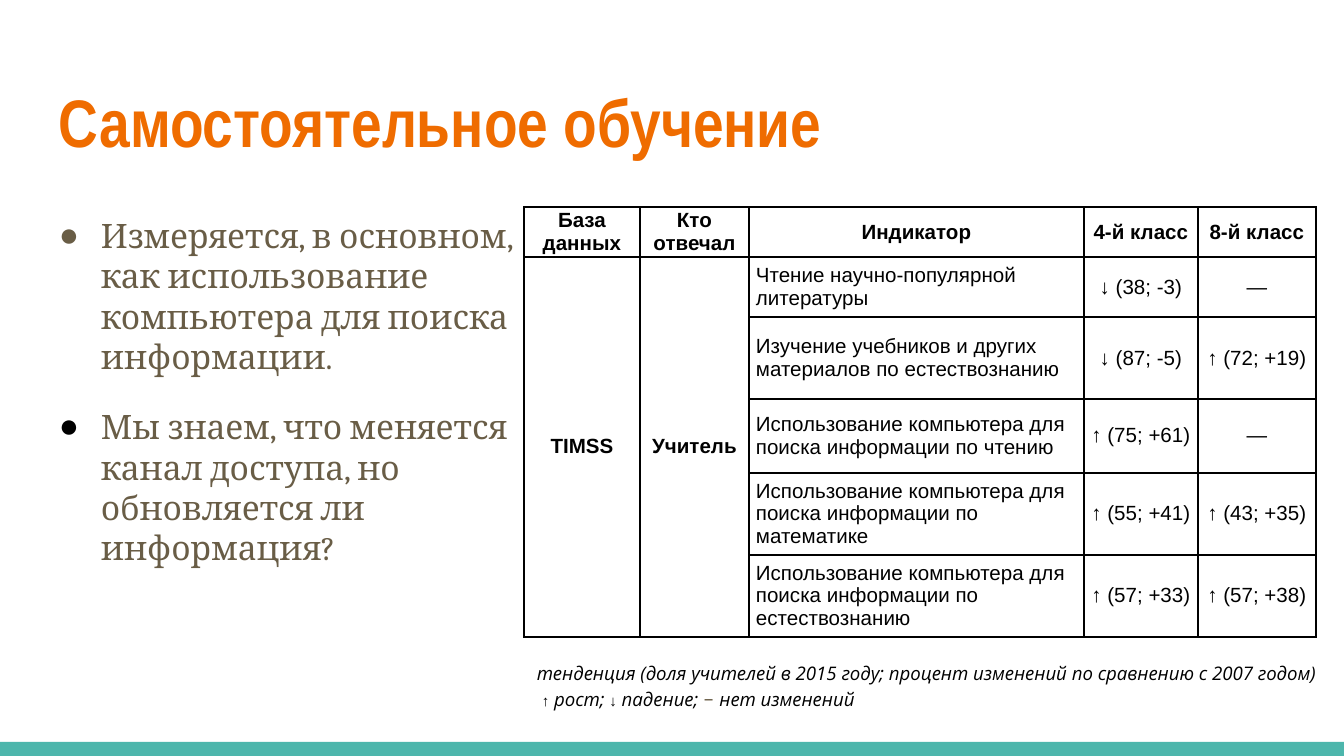
from lxml import etree
from pptx import Presentation
from pptx.dml.color import RGBColor
from pptx.enum import shapes, text
from pptx.oxml import ns
from pptx.util import Emu, Pt

PX = 914400 / 134.4  # EMU in one px
COLORS = {"accent": "EF6C00", "body": "695D46", "ink": "000000",
          "paper": "FFFFFF", "footer": "4DB6AC"}

POINTS = [
    ("Измеряется, в основном, как использование компьютера для поиска информации.", "body", 0),
    ("Мы знаем, что меняется канал доступа, но обновляется ли информация?", "ink", 16),
]
HEADER = ["База данных", "Кто отвечал", "Индикатор", "4-й класс", "8-й класс"]
INDICATORS = [
    ("Чтение научно-популярной литературы", "↓ (38; -3)", "—"),
    ("Изучение учебников и других материалов по естествознанию", "↓ (87; -5)", "↑ (72; +19)"),
    ("Использование компьютера для поиска информации по чтению", "↑ (75; +61)", "—"),
    ("Использование компьютера для поиска информации по математике",
     "↑ (55; +41)", "↑ (43; +35)"),
    ("Использование компьютера для поиска информации по естествознанию",
     "↑ (57; +33)", "↑ (57; +38)"),
]
COLUMN_WIDTHS = [116, 109, 335, 114, 118]
ROW_HEIGHTS = [50, 60, 82, 74, 82, 82]


def px(length):
    return Emu(round(length * PX))


def rgb(name):
    return RGBColor.from_string(COLORS[name])


def child(parent, tag, **attributes):
    return etree.SubElement(parent, ns.qn(tag), attributes)


def add_run(paragraph, wording, font, size, color="ink", bold=False, italic=False):
    run = paragraph.add_run()
    run.text = wording
    run.font.name, run.font.size = font, Pt(size)
    run.font.bold, run.font.italic = bold, italic
    run.font.color.rgb = rgb(color)


def add_text_frame(slide, left, top, width, height, anchor=text.MSO_ANCHOR.TOP):
    frame = slide.shapes.add_textbox(px(left), px(top), px(width), px(height)).text_frame
    frame.word_wrap = True
    frame.vertical_anchor = anchor
    frame.margin_left = frame.margin_right = px(13)
    frame.margin_top = frame.margin_bottom = px(13)
    return frame


def add_bullet(paragraph, color):
    properties = paragraph._p.get_or_add_pPr()
    properties.set("marL", str(px(42)))
    properties.set("indent", str(-px(42)))
    bullet_color = child(properties, "a:buClr")
    child(bullet_color, "a:srgbClr", val=COLORS[color])
    child(properties, "a:buFont", typeface="Arial")
    child(properties, "a:buChar", char="●")


def add_points(slide):
    frame = add_text_frame(slide, 46, 202, 516, 485)
    for index, (wording, bullet_color, gap) in enumerate(POINTS):
        paragraph = frame.add_paragraph() if index else frame.paragraphs[0]
        paragraph.space_before = paragraph.space_after = Pt(gap)
        add_bullet(paragraph, bullet_color)
        add_run(paragraph, wording, "Cambria", 18, "body")


def style_cell(cell):
    cell.margin_left = cell.margin_right = px(7)
    cell.margin_top = cell.margin_bottom = 0
    cell.vertical_anchor = text.MSO_ANCHOR.MIDDLE
    properties = cell._tc.get_or_add_tcPr()
    for side in ("a:lnL", "a:lnR", "a:lnT", "a:lnB"):
        line = child(properties, side, w=str(Pt(1)))
        child(child(line, "a:solidFill"), "a:srgbClr", val=COLORS["ink"])
    cell.fill.solid()
    cell.fill.fore_color.rgb = rgb("paper")


def write_cell(cell, wording, bold=False, centred=True):
    paragraph = cell.text_frame.paragraphs[0]
    paragraph.alignment = text.PP_ALIGN.CENTER if centred else text.PP_ALIGN.LEFT
    add_run(paragraph, wording, "Arial", 11, bold=bold)


def add_indicator_table(slide):
    table = slide.shapes.add_table(
        len(ROW_HEIGHTS), len(COLUMN_WIDTHS), px(524), px(207),
        px(sum(COLUMN_WIDTHS)), px(sum(ROW_HEIGHTS))).table
    table.first_row = table.horz_banding = False
    for column, width in zip(table.columns, COLUMN_WIDTHS):
        column.width = px(width)
    for row, height in zip(table.rows, ROW_HEIGHTS):
        row.height = px(height)
    for cell in table.iter_cells():
        style_cell(cell)

    for column, heading in enumerate(HEADER):
        write_cell(table.cell(0, column), heading, bold=True)
    # Source and respondent span all indicators
    for column, label in enumerate(["TIMSS", "Учитель"]):
        table.cell(1, column).merge(table.cell(len(INDICATORS), column))
        write_cell(table.cell(1, column), label, bold=True)
    for row, values in enumerate(INDICATORS, start=1):
        for column, value in enumerate(values, start=2):
            write_cell(table.cell(row, column), value, centred=column > 2)


def add_legend(slide):
    frame = add_text_frame(slide, 524, 649, 888, 74)

    def note(paragraph, wording):
        add_run(paragraph, wording, "Open Sans", 10, italic=True)

    note(frame.paragraphs[0],
         "тенденция (доля учителей в 2015 году; процент изменений по сравнению с 2007 годом)")
    key = frame.add_paragraph()
    note(key, " ")
    for arrow, meaning in [("↑", " рост; "), ("↓", " падение; ")]:
        add_run(key, arrow, "Arial", 8)
        note(key, meaning)
    add_run(key, "– ", "Calibri", 12, "body")
    note(key, "нет изменений")


def add_footer_bar(slide):
    bar = slide.shapes.add_shape(
        shapes.MSO_SHAPE.RECTANGLE, 0, px(742), px(1344), px(14))
    bar.shadow.inherit = False
    bar.fill.solid()
    bar.fill.fore_color.rgb = rgb("footer")
    bar.line.fill.background()


def main():
    deck = Presentation()
    deck.slide_width, deck.slide_height = px(1344), px(756)
    slide = deck.slides.add_slide(deck.slide_layouts[6])

    add_footer_bar(slide)
    # Title
    title = add_text_frame(slide, 46, 69, 1252, 103, text.MSO_ANCHOR.MIDDLE)
    add_run(title.paragraphs[0], "Самостоятельное обучение", "Arial Narrow", 36,
            "accent", bold=True)
    # Content
    add_points(slide)
    add_indicator_table(slide)
    add_legend(slide)
    deck.save("out.pptx")


if __name__ == "__main__":
    main()
